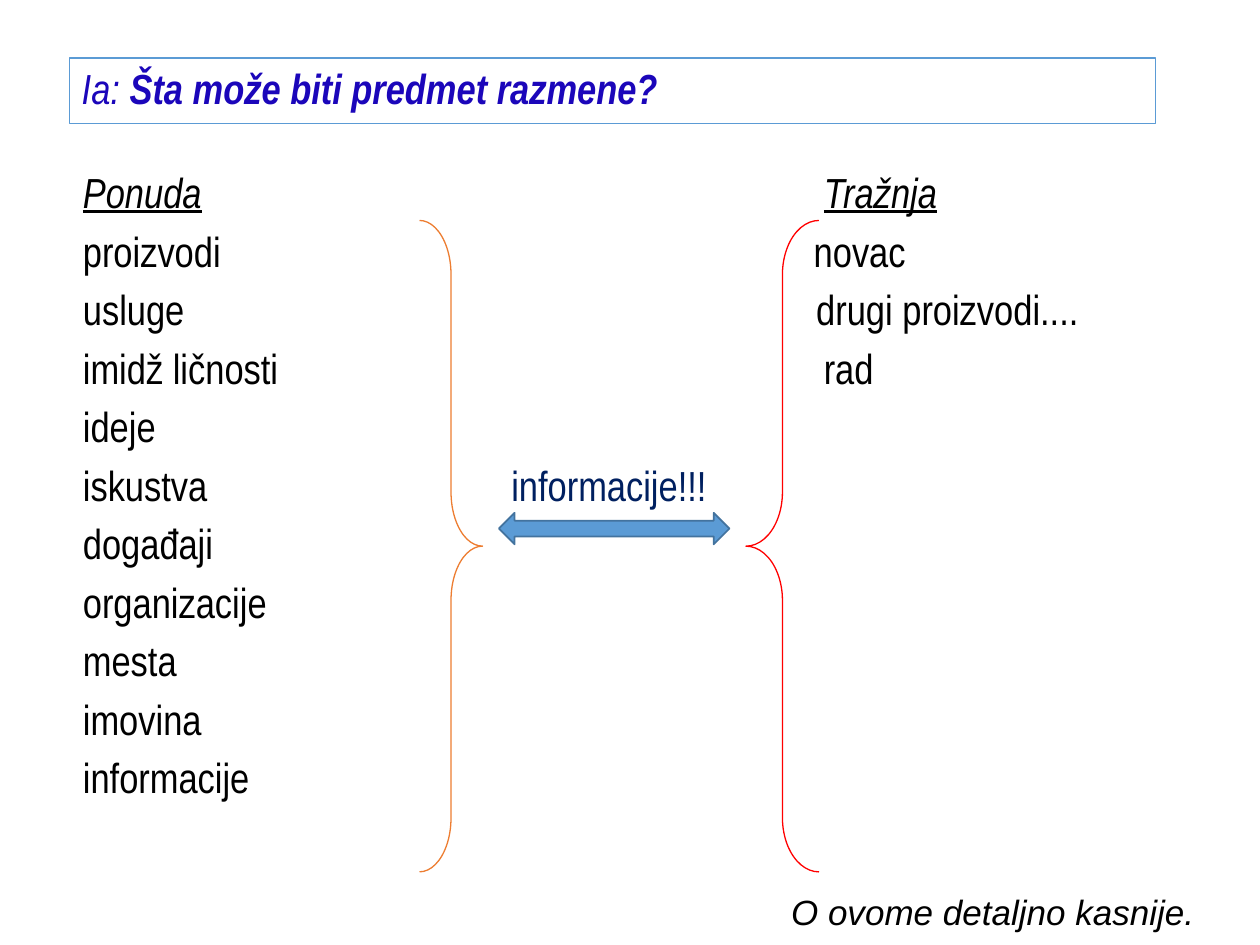
from lxml import etree
from pptx import Presentation
from pptx import util as u
from pptx.dml.color import RGBColor
from pptx.enum import shapes, text
from pptx.oxml.ns import qn

BLACK = RGBColor(0, 0, 0)
INDIGO = RGBColor(0x1B, 0x06, 0xBA)
NAVY = RGBColor(0x00, 0x20, 0x60)
BLUE = RGBColor(0x5B, 0x9B, 0xD5)
STEEL = RGBColor(0x43, 0x73, 0x9E)
ORANGE = RGBColor(0xED, 0x7D, 0x31)
RED = RGBColor(0xFF, 0, 0)

COLUMNS, ROWS = 100, 75
BRACE_TOP, BRACE_HEIGHT = 17.5, 51.7
HEADING = {"italic": True, "underline": True}
EXCHANGE = [
    ("Ponuda", "Tražnja", 58.8, HEADING, HEADING),
    ("proizvodi", "novac", 58, {}, {}),
    ("usluge", "drugi proizvodi....", 58.2, {}, {}),
    ("imidž ličnosti", "rad", 58.8, {}, {}),
    ("ideje", "", 0, {}, {}),
    ("iskustva", "informacije!!!", 34, {}, {"color": NAVY}),
    ("događaji", "", 0, {}, {}),
    ("organizacije", "", 0, {}, {}),
    ("mesta", "", 0, {}, {}),
    ("imovina", "", 0, {}, {}),
    ("informacije", "", 0, {}, {}),
]


class Page:
    """Draws styled elements on one slide, placed by columns and rows of its grid."""

    def __init__(self, deck):
        self.page = deck.slides.add_slide(deck.slide_layouts[6])
        self.column = deck.slide_width / COLUMNS
        self.row = deck.slide_height / ROWS
        self.style = {"name": "Arial Narrow", "size": u.Pt(24), "color": BLACK}

    def place(self, left, top, width, height):
        return [round(share * unit) for share, unit in
                zip((left, top, width, height), (self.column, self.row) * 2)]

    def span(self, para, words, **changes):
        span = para.add_run()
        span.text = words
        for key, value in {**self.style, **changes}.items():
            if key == "color":
                span.font.color.rgb = value
            else:
                setattr(span.font, key, value)

    def tab(self, para, column):
        stops = etree.SubElement(para._p.get_or_add_pPr(), qn("a:tabLst"))
        etree.SubElement(stops, qn("a:tab"), pos=str(round(column * self.column)), algn="l")

    def box(self, area, **layout):
        frame = self.page.shapes.add_textbox(*self.place(*area)).text_frame
        for key, value in {"word_wrap": True, **layout}.items():
            setattr(frame, key, value)
        return frame

    def shape(self, kind, area, line, weight=0.75, fill=None, adjustments=()):
        shape = self.page.shapes.add_shape(kind, *self.place(*area))
        shape.shadow.inherit = False
        shape.line.color.rgb = line
        shape.line.width = u.Pt(weight)
        if fill is None:
            shape.fill.background()
        else:
            shape.fill.solid()
            shape.fill.fore_color.rgb = fill
        for index, value in enumerate(adjustments):
            shape.adjustments[index] = value
        return shape

    def title(self, area, lead, words):
        frame = self.shape(shapes.MSO_SHAPE.RECTANGLE, area, BLUE).text_frame
        frame.vertical_anchor = text.MSO_ANCHOR.MIDDLE
        para = frame.paragraphs[0]
        para.alignment = text.PP_ALIGN.LEFT
        para.line_spacing = 0.9
        self.span(para, lead, color=INDIGO, italic=True)
        self.span(para, words, color=INDIGO, italic=True, bold=True)

    def pairs(self, area, rows):
        frame = self.box(area)
        for index, (left, right, stop, left_style, right_style) in enumerate(rows):
            para = frame.add_paragraph() if index else frame.paragraphs[0]
            if right:
                self.tab(para, stop)
            para.line_spacing = 0.9
            para.space_before = u.Pt(7.5 if index else 0)
            self.span(para, left, **left_style)
            if right:
                self.span(para, "\t")
                self.span(para, right, **right_style)

    def note(self, area, words):
        para = self.box(area, word_wrap=False).paragraphs[0]
        para.alignment = text.PP_ALIGN.RIGHT
        self.span(para, words, name="Arial", size=u.Pt(20), italic=True)


def main():
    deck = Presentation()
    deck.slide_width, deck.slide_height = u.Inches(10), u.Inches(7.5)
    page = Page(deck)
    kinds = shapes.MSO_SHAPE
    page.title((5.5, 4.6, 86.2, 5.2), "Ia: ", "Šta može biti predmet razmene?")
    page.pairs((5.6, 13.2, 89.4, 56), EXCHANGE)
    page.shape(kinds.RIGHT_BRACE, (33.3, BRACE_TOP, 5, BRACE_HEIGHT), ORANGE,
               adjustments=(0.86, 0.5))
    page.shape(kinds.LEFT_BRACE, (59.2, BRACE_TOP, 5.8, BRACE_HEIGHT), RED,
               adjustments=(0.74, 0.5))
    page.shape(kinds.LEFT_RIGHT_ARROW, (39.6, 40.7, 18.3, 2.5), STEEL, 1, BLUE)
    page.note((61.5, 70.2, 34.3, 4.4), "O ovome detaljno kasnije.")
    deck.save("out.pptx")


if __name__ == "__main__":
    main()
